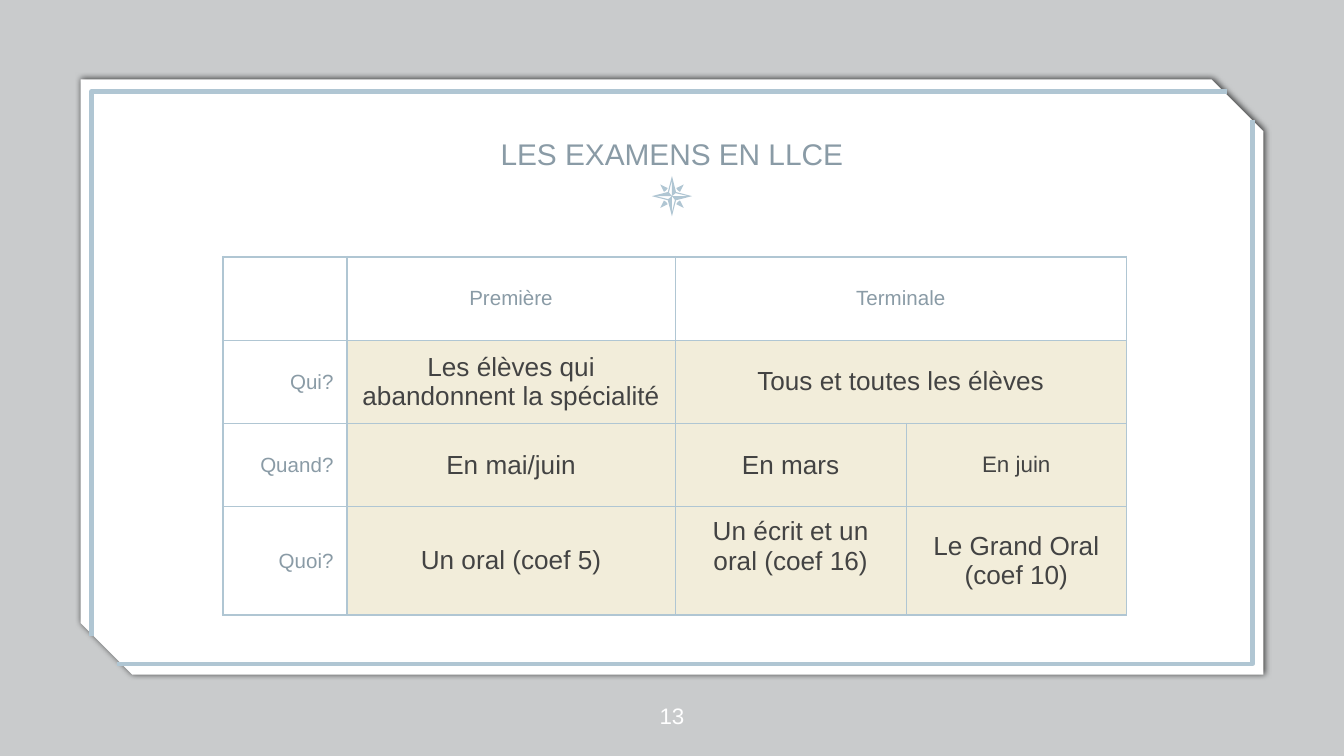
from lxml import etree
from pptx import Presentation
from pptx.dml.color import RGBColor
from pptx.enum import shapes, text
from pptx.oxml import ns, parse_xml
from pptx.util import Pt

# Content
TITLE = "LES EXAMENS EN LLCE"
PAGE_NUMBER = "13"
ROWS = [
    ["", "Première", "Terminale", None],  # None: merged with the cell on its left
    ["Qui?", "Les élèves qui abandonnent la spécialité", "Tous et toutes les élèves", None],
    ["Quand?", "En mai/juin", "En mars", "En juin"],
    ["Quoi?", "Un oral (coef 5)", "Un écrit et un oral (coef 16)", "Le Grand Oral (coef 10)"],
]
SIZE_EXCEPTIONS = {(2, 3): 12}
BOTTOM_MARGINS = {(3, 2): 20.6}

# Look
FONT = "Arial"
WHITE = RGBColor(0xFF, 0xFF, 0xFF)
SHADE = RGBColor(0x04, 0x0E, 0x11)
BLUE = RGBColor(0xB0, 0xC6, 0xD3)
SLATE = RGBColor(0x8A, 0x9B, 0xA6)
CREAM = RGBColor(0xF2, 0xED, 0xDA)
INK = RGBColor(0x43, 0x43, 0x43)

# Layout in points
WIDTH, HEIGHT = 720, 405
COLUMN_WIDTHS = [66.4, 175.8, 123.8, 118]
ROW_HEIGHTS = [44.6, 44.6, 44.6, 58]
TABLE_LEFT, TABLE_TOP = 119.5, 137.7
FRAME_CORNER = [(49, 340.6), (49, 49), (657.4, 49)]
FRAME_SPAN = (720, 404.7)
ROSE_CENTRE = (360, 105.1)
SMALL_RAY = [(-6.3, -6.3), (-4.3, -2.3), (-3.1, -3.1), (-2.3, -4.3)]
RAY_EDGE = [(0, -10.8), (2.2, -2.2)]
RAY_HOLLOW = [(0, -8.6), (0, 0), (-1.6, -2)]

presentation = Presentation()
presentation.slide_width, presentation.slide_height = Pt(WIDTH), Pt(HEIGHT)
slide = presentation.slides.add_slide(presentation.slide_layouts[5])


def add_panel(kind, left, top, width, height, color):
    shape = slide.shapes.add_shape(kind, Pt(left), Pt(top), Pt(width), Pt(height))
    shape.shadow.inherit = False
    shape.fill.solid()
    shape.fill.fore_color.rgb = color
    shape.line.fill.background()
    return shape


def add_outline(contours, closed):
    first, *others = [[(Pt(x), Pt(y)) for x, y in contour] for contour in contours]
    builder = slide.shapes.build_freeform(*first[0])
    builder.add_line_segments(first[1:], close=closed)
    for contour in others:
        builder.move_to(*contour[0])
        builder.add_line_segments(contour[1:], close=closed)
    shape = builder.convert_to_shape()
    shape.shadow.inherit = False
    if closed:
        shape.fill.solid()
        shape.fill.fore_color.rgb = BLUE
        shape.line.fill.background()
    else:
        shape.fill.background()
        shape.line.color.rgb = BLUE
        shape.line.width = Pt(2.25)


def quarter_turns(points):
    """The points around the rose centre, turned by 0, 90, 180 and 270 degrees."""
    turns = []
    for _ in range(4):
        turns.append([(ROSE_CENTRE[0] + x, ROSE_CENTRE[1] + y) for x, y in points])
        points = [(-y, x) for x, y in points]
    return turns


def write(frame, words, size, color, alignment):
    paragraph = frame.paragraphs[0]
    paragraph.alignment = alignment
    run = paragraph.add_run()
    run.text = words
    for name, value in {"name": FONT, "size": Pt(size), "bold": False}.items():
        setattr(run.font, name, value)
    run.font.color.rgb = color


def format_box(shape, left, top, width, height, anchor):
    place = {"left": left, "top": top, "width": width, "height": height}
    for name, value in place.items():
        setattr(shape, name, Pt(value))
    frame = shape.text_frame
    for side in ("left", "top", "right", "bottom"):
        setattr(frame, f"margin_{side}", 0)
    frame.word_wrap = True
    frame.auto_size = text.MSO_AUTO_SIZE.NONE
    frame.vertical_anchor = anchor
    return frame


def add_border(cell, side, width):
    cell._tc.get_or_add_tcPr().append(parse_xml(
        f'<a:ln{side} {ns.nsdecls("a")} w="{Pt(width)}"><a:solidFill>'
        f'<a:srgbClr val="{BLUE}"/></a:solidFill></a:ln{side}>'))


# Grey backdrop and white card
backdrop = add_panel(shapes.MSO_SHAPE.RECTANGLE, 0, 0, WIDTH, HEIGHT, SHADE)
shade = backdrop._element.spPr.find(".//" + ns.qn("a:srgbClr"))
etree.SubElement(shade, ns.qn("a:alpha"), val="21000")

card = add_panel(shapes.MSO_SHAPE.SNIP_2_DIAG_RECTANGLE, 43.2, 42.5, 633.6, 319, WHITE)
card.adjustments[0], card.adjustments[1] = 0, 0.087
card._element.spPr.find(ns.qn("a:effectLst")).append(parse_xml(
    f'<a:outerShdw {ns.nsdecls("a")} blurRad="{Pt(3.4)}" dist="{Pt(0.8)}" dir="0" '
    'rotWithShape="0"><a:srgbClr val="000000"><a:alpha val="68000"/></a:srgbClr></a:outerShdw>'))

# Frame: one corner and its half-turn
add_outline([FRAME_CORNER], closed=False)
add_outline([[(FRAME_SPAN[0] - x, FRAME_SPAN[1] - y) for x, y in FRAME_CORNER]], closed=False)

# Compass rose
for ray in quarter_turns(SMALL_RAY):
    add_outline([ray], closed=True)
star = [point for edge in quarter_turns(RAY_EDGE) for point in edge]
add_outline([star] + quarter_turns(RAY_HOLLOW), closed=True)

# Title, brought in front of the card
title = slide.shapes.title
title._element.getparent().append(title._element)
frame = format_box(title, 79, 48.8, 562, 43.2, text.MSO_ANCHOR.BOTTOM)
write(frame, TITLE, 16, SLATE, text.PP_ALIGN.CENTER)

# Table
table = slide.shapes.add_table(
    len(ROWS), len(COLUMN_WIDTHS), Pt(TABLE_LEFT), Pt(TABLE_TOP),
    Pt(sum(COLUMN_WIDTHS)), Pt(sum(ROW_HEIGHTS))).table
table.first_row = table.horz_banding = False
for column, width in zip(table.columns, COLUMN_WIDTHS):
    column.width = Pt(width)
for row, height in zip(table.rows, ROW_HEIGHTS):
    row.height = Pt(height)

for i, row in enumerate(ROWS):
    for j, words in enumerate(row):
        cell = table.cell(i, j)
        outer = {"L": j == 0, "R": False, "T": i == 0, "B": i == len(ROWS) - 1}
        for side, thick in outer.items():
            add_border(cell, side, 1.5 if thick else 0.75)
        heading = i == 0 or j == 0
        if heading:
            cell.fill.background()
        else:
            cell.fill.solid()
            cell.fill.fore_color.rgb = CREAM
        if words is None:
            table.cell(i, j - 1).merge(cell)
            continue
        margins = {"left": 7.2, "right": 7.2, "top": 5, "bottom": BOTTOM_MARGINS.get((i, j), 5)}
        for side, margin in margins.items():
            setattr(cell, f"margin_{side}", Pt(margin))
        cell.vertical_anchor = text.MSO_ANCHOR.MIDDLE
        if words:
            write(cell.text_frame, words,
                  11 if heading else SIZE_EXCEPTIONS.get((i, j), 14),
                  SLATE if heading else INK,
                  text.PP_ALIGN.RIGHT if j == 0 else text.PP_ALIGN.CENTER)

# Page number
number = slide.shapes.add_textbox(0, 0, 0, 0)
frame = format_box(number, 338.4, 361.8, 43.2, 43.2, text.MSO_ANCHOR.MIDDLE)
write(frame, PAGE_NUMBER, 12, WHITE, text.PP_ALIGN.CENTER)

presentation.save("out.pptx")
